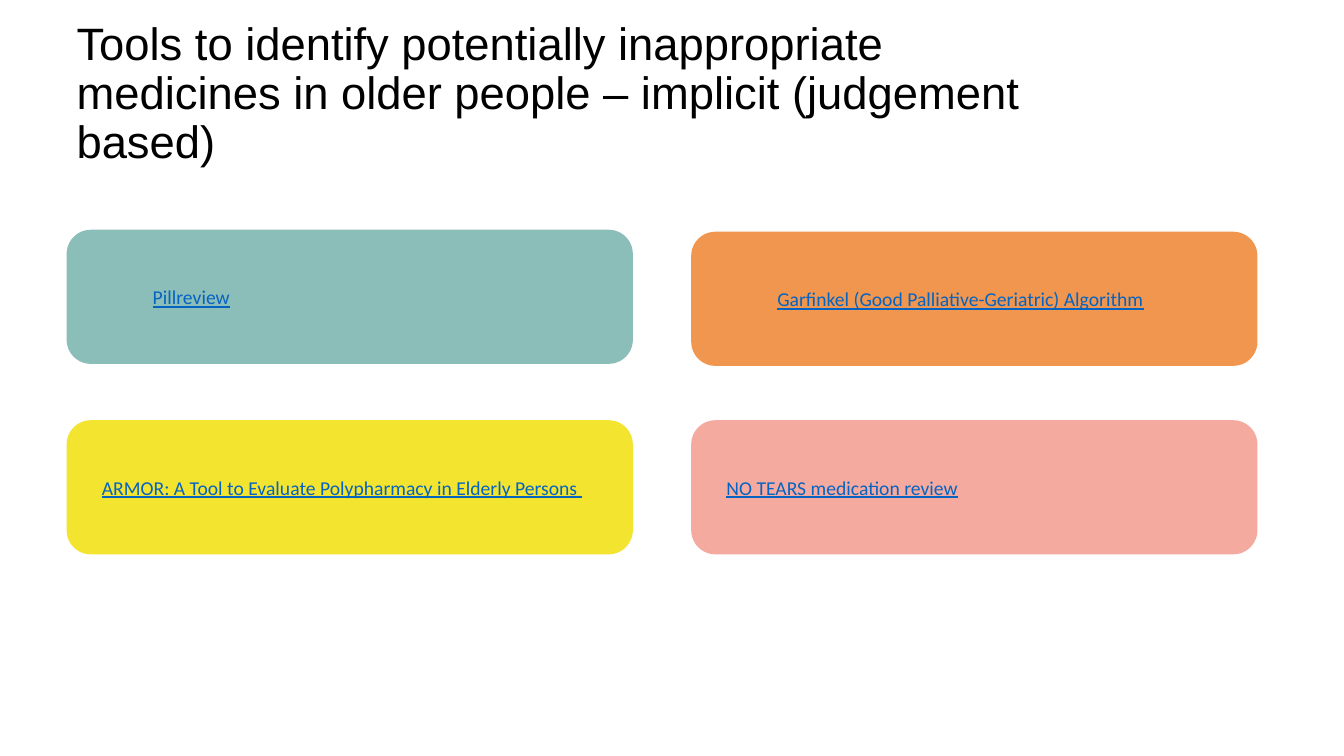
"""Build a slide listing implicit tools for spotting inappropriate medicines in older people."""
from pptx import Presentation
from pptx.dml.color import RGBColor
from pptx.enum.shapes import MSO_SHAPE
from pptx.enum.text import MSO_ANCHOR, PP_ALIGN
from pptx.util import Cm, Pt

ROUNDED = MSO_SHAPE.ROUNDED_RECTANGLE
MIDDLE = MSO_ANCHOR.MIDDLE
LEFT = PP_ALIGN.LEFT

COLORS = {
    "title": "000000",
    "link": "0563C1",
    "teal": "8CBEB9",
    "orange": "F0964F",
    "yellow": "F3E42F",
    "pink": "F5AAA0",
}
CARD_WIDTH, CARD_HEIGHT = 14.27, 3.38
LEFT_COLUMN, RIGHT_COLUMN = 1.68, 17.42
BOTTOM_ROW = 10.59


def write_text(shape, text, *, font, size, color, underline=False,
               margin=None, level_indent=0, first_indent=0, line_spacing=1.0):
    frame = shape.text_frame
    frame.word_wrap = True
    frame.vertical_anchor = MIDDLE
    if margin is not None:
        frame.margin_left = frame.margin_right = Cm(margin)
        frame.margin_top = frame.margin_bottom = Cm(margin)
    paragraph = frame.paragraphs[0]
    paragraph.alignment = LEFT
    paragraph.line_spacing = line_spacing
    properties = paragraph._p.get_or_add_pPr()
    properties.set("marL", str(Cm(level_indent)))
    properties.set("indent", str(Cm(first_indent)))
    run = paragraph.add_run()
    run.text = text
    run.font.name = font
    run.font.size = Pt(size)
    run.font.underline = underline
    run.font.color.rgb = RGBColor.from_string(COLORS[color])


presentation = Presentation()
presentation.slide_width = Cm(33.87)
presentation.slide_height = Cm(19.05)
slide = presentation.slides.add_slide(presentation.slide_layouts[6])

title = slide.shapes.add_textbox(Cm(LEFT_COLUMN), Cm(0.91), Cm(26.14), Cm(2.97))
write_text(
    title,
    "Tools to identify potentially inappropriate medicines in older people – implicit (judgement based)",
    font="Arial", size=32.4, color="title", line_spacing=0.9,
)

cards = [
    ("ARMOR: A Tool to Evaluate Polypharmacy in Elderly Persons ", "yellow", LEFT_COLUMN, BOTTOM_ROW, False),
    ("Pillreview", "teal", LEFT_COLUMN, 5.79, True),
    ("Garfinkel (Good Palliative-Geriatric) Algorithm", "orange", RIGHT_COLUMN, 5.84, True),
    ("NO TEARS medication review", "pink", RIGHT_COLUMN, BOTTOM_ROW, False),
]
for text, color, left, top, separate_label in cards:
    card = slide.shapes.add_shape(ROUNDED, Cm(left), Cm(top), Cm(CARD_WIDTH), Cm(CARD_HEIGHT))
    card.adjustments[0] = 0.18
    card.shadow.inherit = False
    card.fill.solid()
    card.fill.fore_color.rgb = RGBColor.from_string(COLORS[color])
    card.line.fill.background()
    label = card
    if separate_label:
        label = slide.shapes.add_textbox(Cm(left + 0.19), Cm(top + 1.32), Cm(13.92), Cm(0.74))
    write_text(
        label, text, font="Calibri", size=14, color="link", underline=True, margin=0.08,
        level_indent=1.27 if separate_label else 0, first_indent=0.63,
    )

presentation.save("out.pptx")
